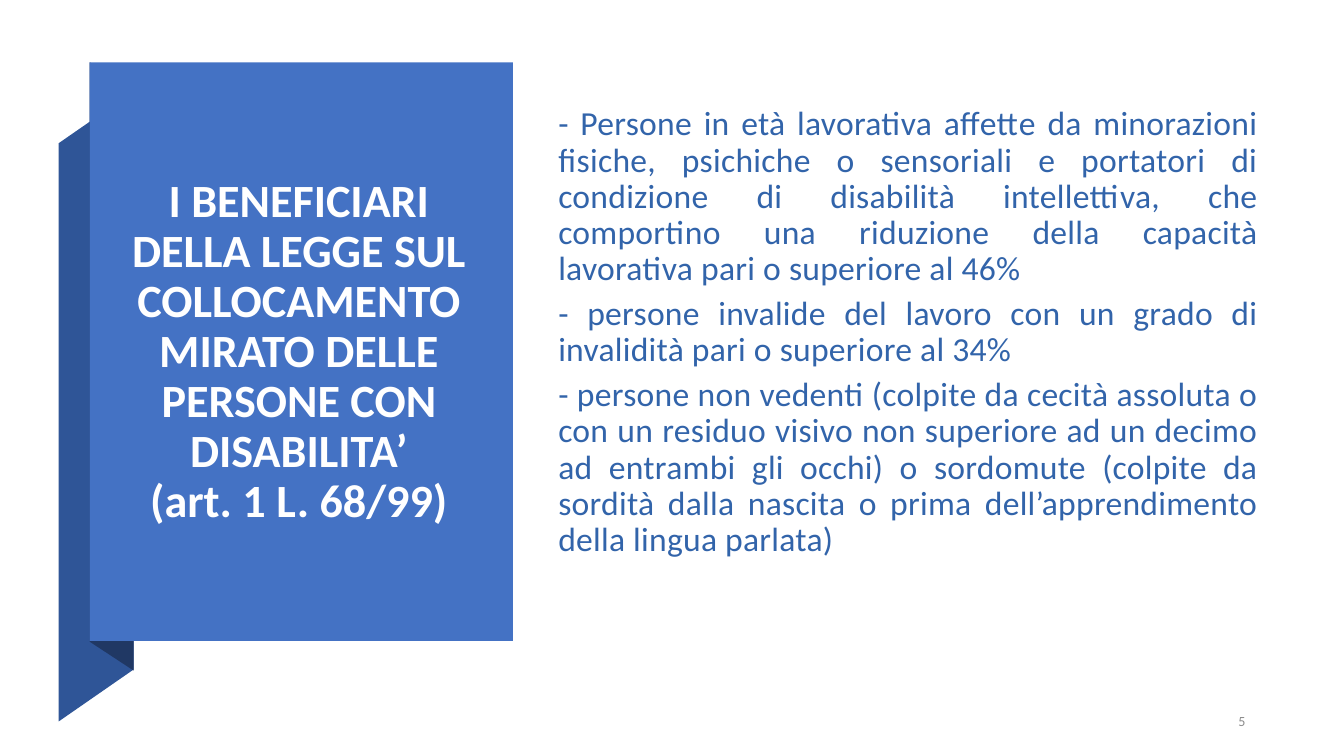
from dataclasses import dataclass
from typing import NamedTuple

from pptx import Presentation
from pptx.dml.color import RGBColor
from pptx.enum.shapes import MSO_SHAPE
from pptx.enum.text import MSO_ANCHOR, MSO_AUTO_SIZE, PP_ALIGN
from pptx.util import Cm, Pt


@dataclass(frozen=True)
class Theme:
    font: str = "Calibri"
    panel: str = "4472C4"
    ribbon: str = "2F5597"
    fold: str = "203864"
    title: str = "FFFFFF"
    body: str = "3264AA"
    number: str = "8C8C8C"
    title_size: float = 33
    body_size: float = 24
    number_size: float = 10


class Box(NamedTuple):
    left: float
    top: float
    width: float
    height: float

    def lengths(self) -> list:
        return [Cm(v) for v in self]


class Outline(NamedTuple):
    color: str
    points: list[tuple[float, float]]


THEME = Theme()
PANEL = Box(2.26, 1.57, 10.67, 14.58)
TITLE = Box(3.05, 2.46, 8.97, 12.85)
BODY = Box(13.82, 2.46, 18.14, 12.83)
NUMBER = Box(29.74, 17.73, 1.9, 0.89)

RIBBON_PARTS = [
    Outline(THEME.ribbon, [(1.48, 18.18), (3.37, 16.87), (3.37, 2.3), (1.48, 3.61)]),
    Outline(THEME.fold, [(2.26, 16.17), (3.37, 16.9), (3.37, 2.29), (2.26, 1.57)]),
]

# \v is a line break inside the title paragraph
TITLE_TEXT = ("I BENEFICIARI\vDELLA LEGGE SUL COLLOCAMENTO MIRATO DELLE "
              "PERSONE CON DISABILITA’\v(art. 1 L. 68/99)")
BENEFICIARIES = [
    "- Persone in età lavorativa affette da minorazioni fisiche, psichiche o "
    "sensoriali e portatori di condizione di disabilità intellettiva, che "
    "comportino una riduzione della capacità lavorativa pari o superiore al 46%",
    "- persone invalide del lavoro con un grado di invalidità pari o "
    "superiore al 34%",
    "- persone non vedenti (colpite da cecità assoluta o con un residuo visivo "
    "non superiore ad un decimo ad entrambi gli occhi) o sordomute (colpite da "
    "sordità dalla nascita o prima dell’apprendimento della lingua parlata)",
]


def paint(shape, color: str) -> None:
    shape.fill.solid()
    shape.fill.fore_color.rgb = RGBColor.from_string(color)
    shape.line.fill.background()
    shape.shadow.inherit = False


def add_outline(s, outline: Outline) -> None:
    points = [(Cm(x), Cm(y)) for x, y in outline.points]
    builder = s.shapes.build_freeform(*points[0])
    builder.add_line_segments(points[1:], close=True)
    paint(builder.convert_to_shape(), outline.color)


def write(tf, texts: list[str], *, size: float, color: str, align: PP_ALIGN,
          bold: bool = False, line_spacing: float = 1.0, gap: float = 0,
          tracking: float = 0) -> None:
    """Fill a frame with paragraphs; gap and tracking are in points."""
    tf.word_wrap = True
    tf.auto_size = MSO_AUTO_SIZE.NONE
    tf.vertical_anchor = MSO_ANCHOR.MIDDLE
    for i, text in enumerate(texts):
        p = tf.add_paragraph() if i else tf.paragraphs[0]
        p.text = text
        p.alignment = align
        p.line_spacing = line_spacing
        p.space_before = Pt(gap if i else 0)
        for r in p.runs:
            r.font.name = THEME.font
            r.font.size = Pt(size)
            r.font.bold = bold
            r.font.color.rgb = RGBColor.from_string(color)
            if tracking:
                r.font._element.set("spc", str(round(tracking * 100)))


def main() -> None:
    prs = Presentation()
    prs.slide_width, prs.slide_height = Cm(33.87), Cm(19.05)
    s = prs.slides.add_slide(prs.slide_layouts[5])

    for part in RIBBON_PARTS:
        add_outline(s, part)
    paint(s.shapes.add_shape(MSO_SHAPE.RECTANGLE, *PANEL.lengths()), THEME.panel)

    title = s.shapes.title
    title.left, title.top, title.width, title.height = TITLE.lengths()
    write(title.text_frame, [TITLE_TEXT], size=THEME.title_size,
          color=THEME.title, align=PP_ALIGN.CENTER, bold=True, line_spacing=0.9)
    s.shapes._spTree.append(title._element)  # bring the title above the panel

    body = s.shapes.add_textbox(*BODY.lengths()).text_frame
    body.margin_bottom = Cm(1.1)
    write(body, BENEFICIARIES, size=THEME.body_size, color=THEME.body,
          align=PP_ALIGN.JUSTIFY, line_spacing=0.9, gap=6, tracking=0.2)

    number = s.shapes.add_textbox(*NUMBER.lengths()).text_frame
    write(number, ["5"], size=THEME.number_size, color=THEME.number,
          align=PP_ALIGN.RIGHT)

    prs.save("out.pptx")


if __name__ == "__main__":
    main()
